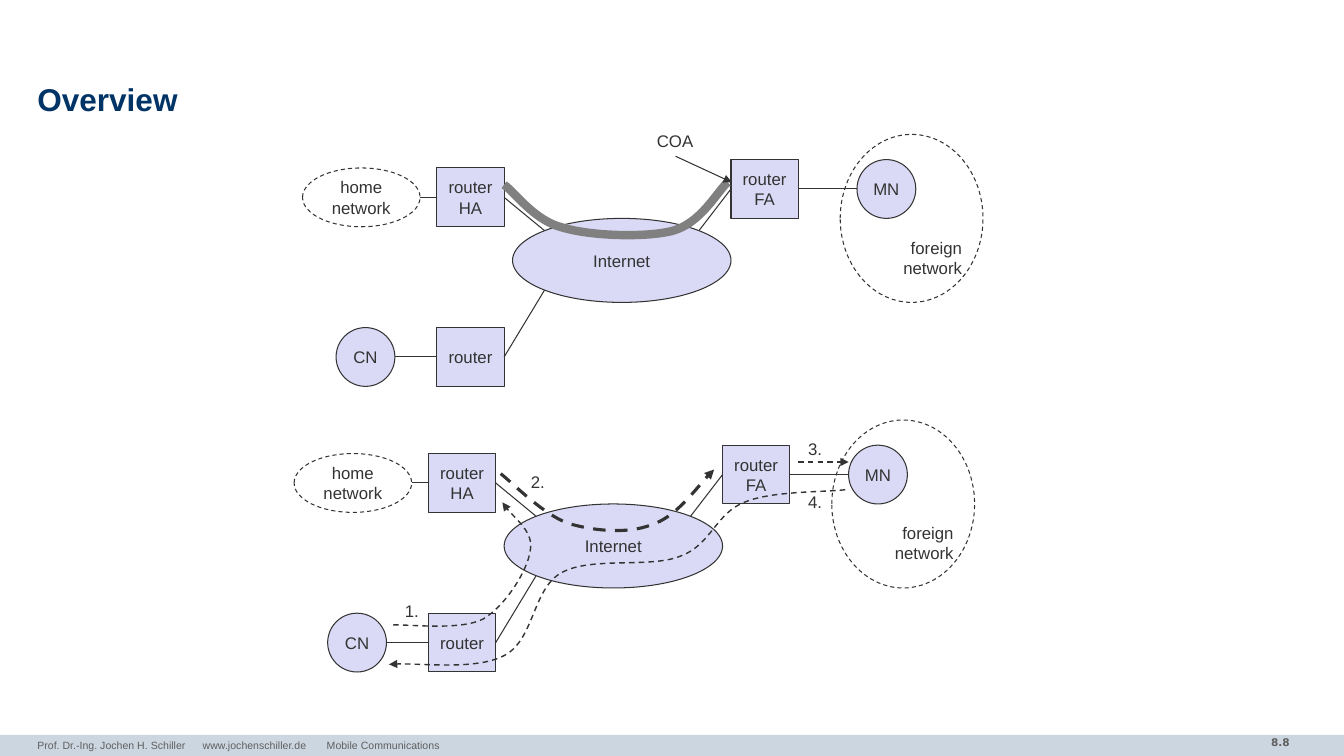
from lxml.etree import SubElement
from pptx import Presentation
from pptx.dml.color import RGBColor
from pptx.enum.dml import MSO_LINE
from pptx.enum.shapes import MSO_CONNECTOR, MSO_SHAPE
from pptx.enum.text import MSO_ANCHOR, PP_ALIGN
from pptx.oxml.ns import qn
from pptx.util import Inches, Pt

deck = Presentation()
deck.slide_width, deck.slide_height = Inches(13.33), Inches(7.5)
slide = deck.slides.add_slide(deck.slide_layouts[6])
shapes = slide.shapes

# Grid: 160 columns by 90 rows of square cells
cell = Inches(1 / 12)
INK, LILAC = "333333", "DADAF6"
OVAL, RECT = MSO_SHAPE.OVAL, MSO_SHAPE.RECTANGLE
LEFT, MID, RIGHT = PP_ALIGN.LEFT, PP_ALIGN.CENTER, PP_ALIGN.RIGHT


def tint(color, code):
    color.rgb = RGBColor.from_string(code)


def write(shape, words, code=INK, align=LEFT, frame={}, **look):
    body = shape.text_frame
    body.word_wrap = False
    for key, val in frame.items():
        setattr(body, key, val)
    body.text = words
    for para in body.paragraphs:
        para.alignment = align
        font = para.runs[0].font
        for key, val in ({"name": "Arial", "size": Pt(12)} | look).items():
            setattr(font, key, val)
        tint(font.color, code)
    return body.paragraphs[0]


# Footer bar
bar = shapes.add_shape(RECT, 0, Inches(7.29), deck.slide_width, Inches(0.21))
bar.shadow.inherit = False
bar.fill.solid()
tint(bar.fill.fore_color, "CCD6E0")
bar.line.fill.background()

# Title, footer and page number
flush = {"margin_left": 0, "margin_right": 0}
tight = flush | {"margin_top": 0, "margin_bottom": 0}
wrap = {"word_wrap": True}
head = shapes.add_textbox(Inches(0.37), Inches(0.78), Inches(12.6), Inches(0.47))
title = write(head, "Overview", "003366", size=Pt(22.5), bold=True,
              frame=tight | wrap | {"vertical_anchor": MSO_ANCHOR.MIDDLE})
title.line_spacing = 0.85

foot = shapes.add_textbox(Inches(0.37), Inches(7.28), Inches(8.72), Inches(0.22))
note = write(foot, "Prof. Dr.-Ing. Jochen H. Schiller", "5F5F5F",
             size=Pt(7.5), frame=flush | wrap)
tabs = SubElement(note._p.get_or_add_pPr(), qn("a:tabLst"))
for stop, words in ((1.64, "www.jochenschiller.de"), (2.87, "Mobile Communications")):
    SubElement(tabs, qn("a:tab"), pos=str(Inches(stop)), algn="l")
    run = note.add_run()
    run.text = "\t" + words
    run.font.name, run.font.size = "Arial", Pt(7.5)
    tint(run.font.color, "5F5F5F")

page = shapes.add_textbox(Inches(11.1), Inches(7.25), Inches(1.79), Inches(0.26))
write(page, "8.8", "5F5F5F", RIGHT, wrap, name="DejaVu Sans", size=Pt(7.5), bold=True)

# Nodes: name, kind, column, row, width, height, words, filled
nodes = (
    ("cn", OVAL, 40, 39, 7, 7, "CN", True),
    ("ha", RECT, 52, 20, 8, 7, "router\nHA", True),
    ("fa", RECT, 87, 19, 8, 7, "router\nFA", True),
    ("net", OVAL, 61, 26, 26, 10, "Internet", True),
    ("hub", RECT, 52, 39, 8, 7, "router", True),
    ("home", OVAL, 36, 20, 14, 7, "home\nnetwork", False),
    ("mn", OVAL, 102, 19, 7, 7, "MN", True),
    ("away", OVAL, 100, 16, 17, 20, "foreign\nnetwork", False),
)
# Links: rectangle, its side, far end
links = (
    ("hub", 3, 64.81, 34.54), ("ha", 3, 64.81, 27.46), ("fa", 1, 83.19, 27.46),
    ("hub", 1, 47, 42.5), ("fa", 3, 102, 22.5), ("ha", 1, 50, 23.5),
)
strokes = []  # shape, colour, width, dashed, arrow

# The same network twice, the lower one shifted by one column and 34 rows
for dx, dy in ((0, 0), (-1, 34)):
    made = {}
    for name, kind, x, y, w, h, words, full in nodes:
        node = shapes.add_shape(kind, *(round(n * cell) for n in (x + dx, y + dy, w, h)))
        node.shadow.inherit = False
        if full:
            node.fill.solid()
            tint(node.fill.fore_color, LILAC)
        else:
            node.fill.background()
        if name == "away":
            write(node, words, align=RIGHT,
                  frame=tight | {"vertical_anchor": MSO_ANCHOR.BOTTOM})
        else:
            write(node, words, align=MID, frame={"vertical_anchor": MSO_ANCHOR.MIDDLE})
        made[name] = node
        strokes.append((node, INK, 0.75, not full, False))
    for name, side, x, y in links:
        end = round((x + dx) * cell), round((y + dy) * cell)
        link = shapes.add_connector(MSO_CONNECTOR.STRAIGHT, *end, *end)
        link.begin_connect(made[name], side)
        strokes.append((link, INK, 0.75, False, False))

# Curves: start, then two handles and an end for each bend
curves = (
    (INK, 1, True, True, ((46.8, 74.4), (48.6, 74.3), (54.7, 75.1), (57.5, 73.7),
     (60.2, 72.1), (62.8, 67.9), (63.1, 65.6), (63.6, 63.4), (60.5, 61.1), (59.8, 59.8))),
    (INK, 2.25, True, True, ((59.6, 56.4), (61, 57.5), (64.6, 61.2), (67.6, 62.3),
     (70.6, 63.2), (74.6, 63.6), (77.5, 62.5), (80.4, 61.6), (83.4, 57.4), (85, 55.9))),
    (INK, 1, True, True, ((100.6, 58.3), (98.5, 58.6), (91.8, 58.4), (88.6, 59.8),
     (85.2, 61.1), (84.6, 64.9), (81, 66.2), (77.4, 67.7), (70.3, 66.2), (66.8, 68.2),
     (63.4, 70.1), (63.6, 76.1), (60.1, 78), (56.8, 79.8), (49.2, 78.8), (46.3, 79.1))),
    ("808080", 6, False, False, ((60, 22), (61.2, 22.8), (63.6, 26.3), (67, 27.1),
     (70.3, 28.1), (76.8, 28.3), (80, 27.5), (83.4, 26.6), (85.3, 22.9), (86.6, 21.7))),
)
for code, width, dash, arrow, spots in curves:
    start, *rest = [(round(x * cell), round(y * cell)) for x, y in spots]
    form = shapes.build_freeform(*start)
    form.add_line_segments(rest, close=False)
    curve = form.convert_to_shape()
    curve.shadow.inherit = False
    curve.fill.background()
    # Each three straight steps become one Bézier bend
    steps = curve._element.xpath(".//a:lnTo")
    for i in range(0, len(steps), 3):
        bend = SubElement(steps[i].getparent(), qn("a:cubicBezTo"))
        for step in steps[i:i + 3]:
            bend.append(step[0])
            step.getparent().remove(step)
    strokes.append((curve, code, width, dash, arrow))

# Straight arrows
for ends, width, dash in (((95, 55, 101, 55), 1, True),
                          ((80.4, 18.6, 87.1, 21.7), 0.75, False)):
    arrow = shapes.add_connector(MSO_CONNECTOR.STRAIGHT, *(round(n * cell) for n in ends))
    strokes.append((arrow, INK, width, dash, True))

# Labels
for words, x, y, w in (("1.", 47, 70.9, 4.1), ("2.", 62, 55.6, 4.1), ("3.", 95, 51.6, 4.1),
                       ("4.", 95, 58, 4.1), ("COA", 77, 15, 6.7)):
    label = shapes.add_textbox(*(round(n * cell) for n in (x, y, w, 3.6)))
    write(label, words)

# Line styles
for shape, code, width, dash, arrow in strokes:
    line = shape.line
    line.width = Pt(width)
    line.fill.solid()
    tint(line.fill.fore_color, code)
    if dash:
        line.dash_style = MSO_LINE.DASH
    if arrow:
        SubElement(shape._element.xpath(".//a:ln")[0], qn("a:tailEnd"), type="triangle")
    if not shape._element.xpath("./p:spPr/a:effectLst"):
        SubElement(shape._element.spPr, qn("a:effectLst"))

deck.save("out.pptx")
